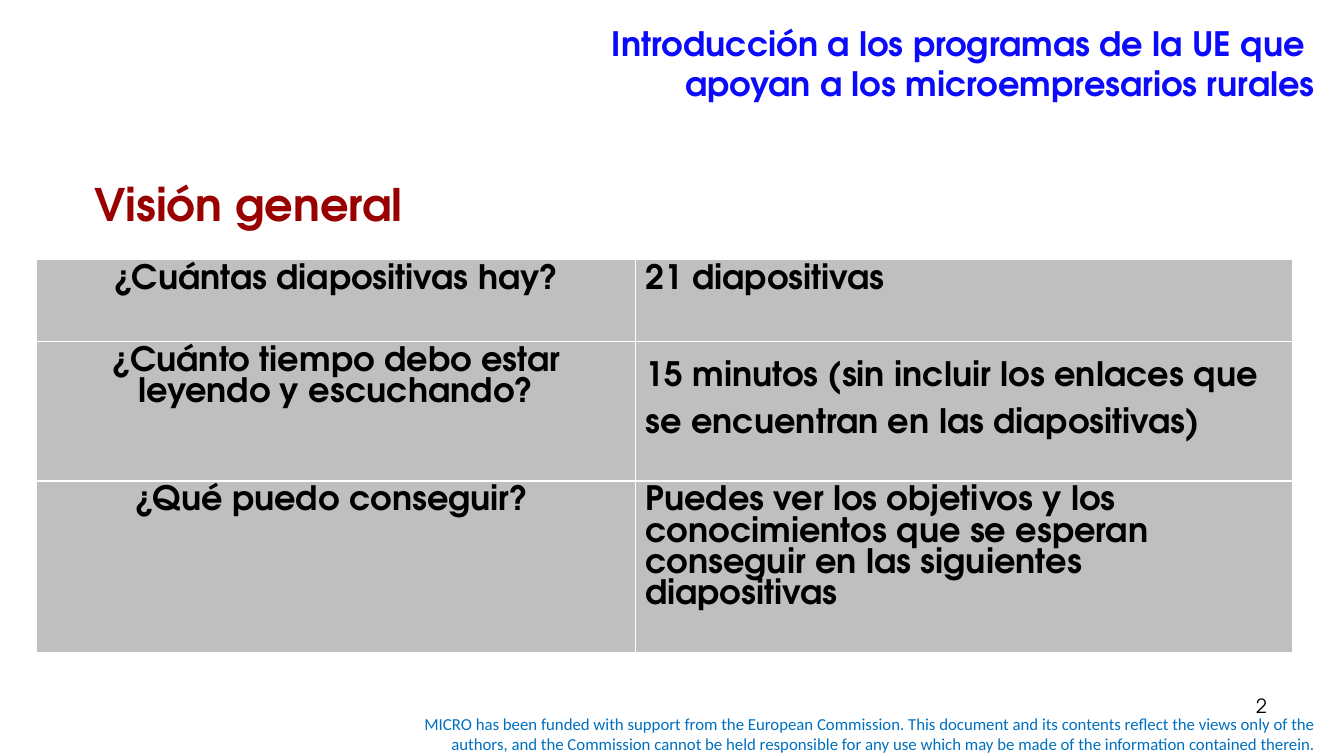
from pptx import Presentation, util as u
from pptx.dml.color import RGBColor
from pptx.enum import text

COLOURS = {"title": "0B0AFD", "heading": "990000", "text": "000000",
           "cell": "BFBFBF", "footer": "0070C0"}
FONT = "TeX Gyre Adventor"


def format_paragraph(paragraph, size, colour, bold=False, align=text.PP_ALIGN.LEFT, font=FONT):
    paragraph.alignment = align
    paragraph.font.name = font
    paragraph.font.size = u.Pt(size)
    paragraph.font.bold = bold
    paragraph.font.color.rgb = RGBColor.from_string(COLOURS[colour])


def add_text(slide, content, left, top, width, height):
    frame = slide.shapes.add_textbox(u.Cm(left), u.Cm(top), u.Cm(width), u.Cm(height)).text_frame
    frame.word_wrap = True
    frame.text = content
    return frame


presentation = Presentation()
presentation.slide_width = u.Cm(33.87)
presentation.slide_height = u.Cm(19.05)
slide = presentation.slides.add_slide(presentation.slide_layouts[5])

# Funding statement
footer = add_text(
    slide,
    "MICRO has been funded with support from the European Commission. This document and its "
    "contents reflect the views only of the authors, and the Commission cannot be held responsible "
    "for any use which may be made of the information contained therein.",
    9.53, 17.86, 23.88, 1.27)
footer.vertical_anchor = text.MSO_ANCHOR.MIDDLE
format_paragraph(footer.paragraphs[0], 12, "footer", align=text.PP_ALIGN.RIGHT, font="Calibri")

# Title
title = slide.shapes.title
title.left, title.top, title.width, title.height = u.Cm(2.9), u.Cm(0), u.Cm(30.48), u.Cm(3.18)
title.text_frame.text = ("Introducción a los programas de la UE que \v"
                         "apoyan a los microempresarios rurales")
title.text_frame.vertical_anchor = text.MSO_ANCHOR.MIDDLE
format_paragraph(title.text_frame.paragraphs[0], 24, "title", True, text.PP_ALIGN.RIGHT)

# Overview table: question, answer, row height, answer line spacing
rows = [
    ("¿Cuántas diapositivas hay?", "21 diapositivas", 2.06, None),
    ("¿Cuánto tiempo debo estar leyendo y escuchando?",
     "15 minutos (sin incluir los enlaces que se encuentran en las diapositivas)", 3.52, 1.5),
    ("¿Qué puedo conseguir? ",
     "Puedes ver los objetivos y los conocimientos que se esperan conseguir en las siguientes "
     "diapositivas", 3.81, None),
]
table = slide.shapes.add_table(len(rows), 2, u.Cm(0.92), u.Cm(6.54), u.Cm(31.65), u.Cm(9.39)).table
table.first_row = False
table.horz_banding = False
table.columns[0].width = u.Cm(15.09)
table.columns[1].width = u.Cm(16.56)

for row, (question, answer, height, answer_spacing) in zip(table.rows, rows):
    row.height = u.Cm(height)
    contents = [(question, text.PP_ALIGN.CENTER, None), (answer, text.PP_ALIGN.LEFT, answer_spacing)]
    for cell, (content, align, spacing) in zip(row.cells, contents):
        cell.fill.solid()
        cell.fill.fore_color.rgb = RGBColor.from_string(COLOURS["cell"])
        cell.text_frame.text = content
        paragraph = cell.text_frame.paragraphs[0]
        paragraph.line_spacing = spacing
        format_paragraph(paragraph, 24, "text", True, align)

# Slide number
number = add_text(slide, "2", 24.28, 17.35, 7.9, 1.32)
format_paragraph(number.paragraphs[0], 14, "text", align=text.PP_ALIGN.RIGHT)

# Section heading
heading = add_text(slide, "Visión general", 2.13, 4.34, 10.13, 1.63)
format_paragraph(heading.paragraphs[0], 32, "heading", True)

presentation.save("out.pptx")
